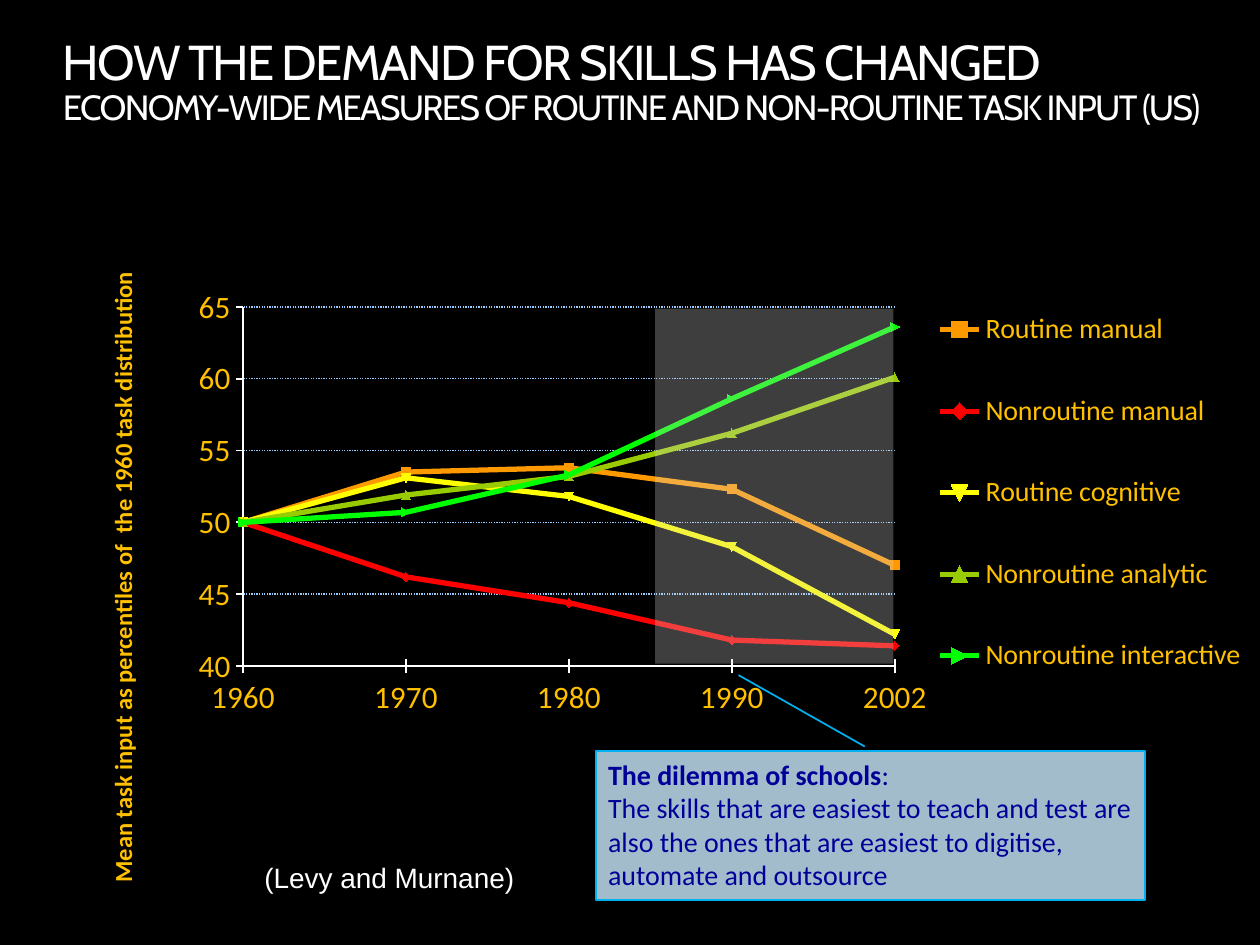
from lxml.etree import SubElement
from pptx import Presentation
from pptx.chart.data import CategoryChartData
from pptx.dml.color import RGBColor
from pptx.enum.chart import XL_CHART_TYPE as CT, XL_LEGEND_POSITION as LP, XL_TICK_MARK as TM
from pptx.enum.dml import MSO_LINE
from pptx.enum.shapes import MSO_SHAPE
from pptx.enum.text import MSO_ANCHOR, PP_ALIGN
from pptx.oxml import parse_xml
from pptx.oxml.ns import nsdecls, qn
from pptx.util import Cm, Pt

COLORS = dict(
    back="000000", white="FFFFFF", gold="FFC000", grid="99CCFF", navy="000099",
    callout="CCECFF", border="00B0F0", shade="D9D9D9",
    orange="FF9900", red="FF0000", yellow="FFFF00", olive="99CC00", green="00FF00",
)
TITLE = [
    ("HOW THE DEMAND FOR SKILLS HAS CHANGED", 28),
    ("ECONOMY-WIDE MEASURES OF ROUTINE AND NON-ROUTINE TASK INPUT (US)", 20),
]
YEARS = ["1960", "1970", "1980", "1990", "2002"]
SERIES = [
    ("Routine manual", "orange", (50, 53.5, 53.8, 52.3, 47)),
    ("Nonroutine manual", "red", (50, 46.2, 44.4, 41.8, 41.4)),
    ("Routine cognitive", "yellow", (50, 53.1, 51.8, 48.3, 42.2)),
    ("Nonroutine analytic", "olive", (50, 51.9, 53.2, 56.2, 60.1)),
    ("Nonroutine interactive", "green", (50, 50.7, 53.3, 58.6, 63.6)),
]
AXIS_TITLE = "Mean task input as percentiles of  the 1960 task distribution"
SOURCE = "(Levy and Murnane)"
DILEMMA = [
    [("The dilemma of schools", True), (":", False)],
    [("The skills that are easiest to teach and test are also the ones that "
      "are easiest to digitise, automate and outsource", False)],
]


def rgb(name):
    return RGBColor.from_string(COLORS[name])


def style(font, size, color, name="Calibri", bold=False):
    font.size, font.name, font.bold = Pt(size), name, bold
    font.color.rgb = rgb(color)


def add_run(p, text, *look, **options):
    r = p.add_run()
    r.text = text
    style(r.font, *look, **options)
    return r


def add_box(s, left, top, width, height):
    box = s.shapes.add_textbox(Cm(left), Cm(top), Cm(width), Cm(height))
    box.text_frame.word_wrap = True
    return box


def fill_translucent(sp, color, percent):
    sp.shadow.inherit = False
    sp.fill.solid()
    sp.fill.fore_color.rgb = rgb(color)
    clr = sp.fill._xPr.find(".//" + qn("a:srgbClr"))
    SubElement(clr, qn("a:alpha")).set("val", str(percent * 1000))


def manual_layout(x, y, w, h, inner=False):
    """Layout element with places given as fractions of the chart."""
    target = '<c:layoutTarget val="inner"/>' if inner else ""
    return parse_xml(
        f'<c:layout {nsdecls("c")}><c:manualLayout>{target}'
        '<c:xMode val="edge"/><c:yMode val="edge"/>'
        f'<c:x val="{x}"/><c:y val="{y}"/><c:w val="{w}"/><c:h val="{h}"/>'
        '</c:manualLayout></c:layout>')


def drop(parent, tag):
    for child in parent.findall(qn(tag)):
        parent.remove(child)


def add_title(s):
    tf = add_box(s, 1.27, 0.76, 23.4, 1.85).text_frame
    tf.margin_left = tf.margin_top = tf.margin_right = tf.margin_bottom = 0
    p = tf.paragraphs[0]
    p.line_spacing = 0.9
    for i, (text, size) in enumerate(TITLE):
        if i:
            p.add_line_break()
        r = add_run(p, text, size, "white", "Cabin")
        r._r.get_or_add_rPr().set("spc", "-100")


def add_task_chart(s):
    data = CategoryChartData(number_format="0.0")
    data.categories = YEARS
    for name, _, values in SERIES:
        data.add_series(name, values)
    chart = s.shapes.add_chart(
        CT.LINE, Cm(2.74), Cm(4.34), Cm(22.5), Cm(12.57), data).chart
    chart.has_title = False
    style(chart.font, 17.8, "gold")

    for series, (_, color, _) in zip(chart.plots[0].series, SERIES):
        series.smooth = False
        series.marker.style = None
        series.format.line.color.rgb = rgb(color)
        series.format.line.width = Pt(3)

    years, scale = chart.category_axis, chart.value_axis
    for axis in (years, scale):
        axis.format.line.color.rgb = rgb("white")
        axis.format.line.width = Pt(1)
    years.major_tick_mark = TM.CROSS
    scale.major_tick_mark = TM.OUTSIDE
    scale.minimum_scale, scale.maximum_scale, scale.major_unit = 40, 65, 5
    scale.tick_labels.number_format = "0"
    scale.tick_labels.number_format_is_linked = False
    grid = scale.major_gridlines.format.line
    grid.color.rgb = rgb("grid")
    grid.width = Pt(0.75)
    grid.dash_style = MSO_LINE.ROUND_DOT

    # The lines start on the value axis itself
    val_ax = scale._element
    drop(val_ax, "c:crossBetween")
    val_ax.find(qn("c:crosses")).addnext(
        parse_xml(f'<c:crossBetween {nsdecls("c")} val="midCat"/>'))

    plot_area = chart._chartSpace.chart.plotArea
    drop(plot_area, "c:layout")
    plot_area.insert(0, manual_layout(0.1, 0.15, 0.58, 0.58, inner=True))
    for tag, value in zip("xywh", (0.096, 0.147, 0.584, 0.576)):
        plot_area.find(".//" + qn("c:" + tag)).set("val", str(value))

    chart.has_legend = True
    legend = chart.legend
    legend.position = LP.RIGHT
    legend.include_in_layout = False
    style(legend.font, 16, "gold")
    drop(legend._element, "c:layout")
    legend._element.find(qn("c:legendPos")).addnext(
        manual_layout(0.71, 0.08, 0.29, 0.73))


def add_labels(s):
    source = add_box(s, 5.08, 17.22, 8.2, 0.94)
    add_run(source.text_frame.paragraphs[0], SOURCE, 16, "white", "Arial")
    label = add_box(s, -6.76, 8.38, 18.47, 0.86)
    label.rotation = 270
    add_run(label.text_frame.paragraphs[0], AXIS_TITLE, 14, "gold", bold=True)


def add_callout(s):
    sp = s.shapes.add_shape(
        MSO_SHAPE.LINE_CALLOUT_1, Cm(12.01), Cm(15.14), Cm(11.07), Cm(3))
    for i, value in enumerate((-0.51, 0.26, -0.03, 0.49)):
        sp.adjustments[i] = value
    fill_translucent(sp, "callout", 80)
    sp.line.color.rgb = rgb("border")
    sp.line.width = Pt(1)
    tf = sp.text_frame
    tf.word_wrap = True
    tf.vertical_anchor = MSO_ANCHOR.TOP
    for i, runs in enumerate(DILEMMA):
        p = tf.add_paragraph() if i else tf.paragraphs[0]
        p.alignment = PP_ALIGN.LEFT
        for text, bold in runs:
            add_run(p, text, 16, "navy", bold=bold)


def add_shade(s):
    """Grey veil over the years after 1985."""
    sp = s.shapes.add_shape(
        MSO_SHAPE.RECTANGLE, Cm(13.21), Cm(6.22), Cm(4.8), Cm(7.16))
    fill_translucent(sp, "shade", 29)
    sp.line.fill.background()


def main():
    prs = Presentation()
    prs.slide_width, prs.slide_height = Cm(25.4), Cm(19.05)
    s = prs.slides.add_slide(prs.slide_layouts[6])
    s.background.fill.solid()
    s.background.fill.fore_color.rgb = rgb("back")
    for add in (add_title, add_task_chart, add_labels, add_callout, add_shade):
        add(s)
    prs.save("out.pptx")


if __name__ == "__main__":
    main()
